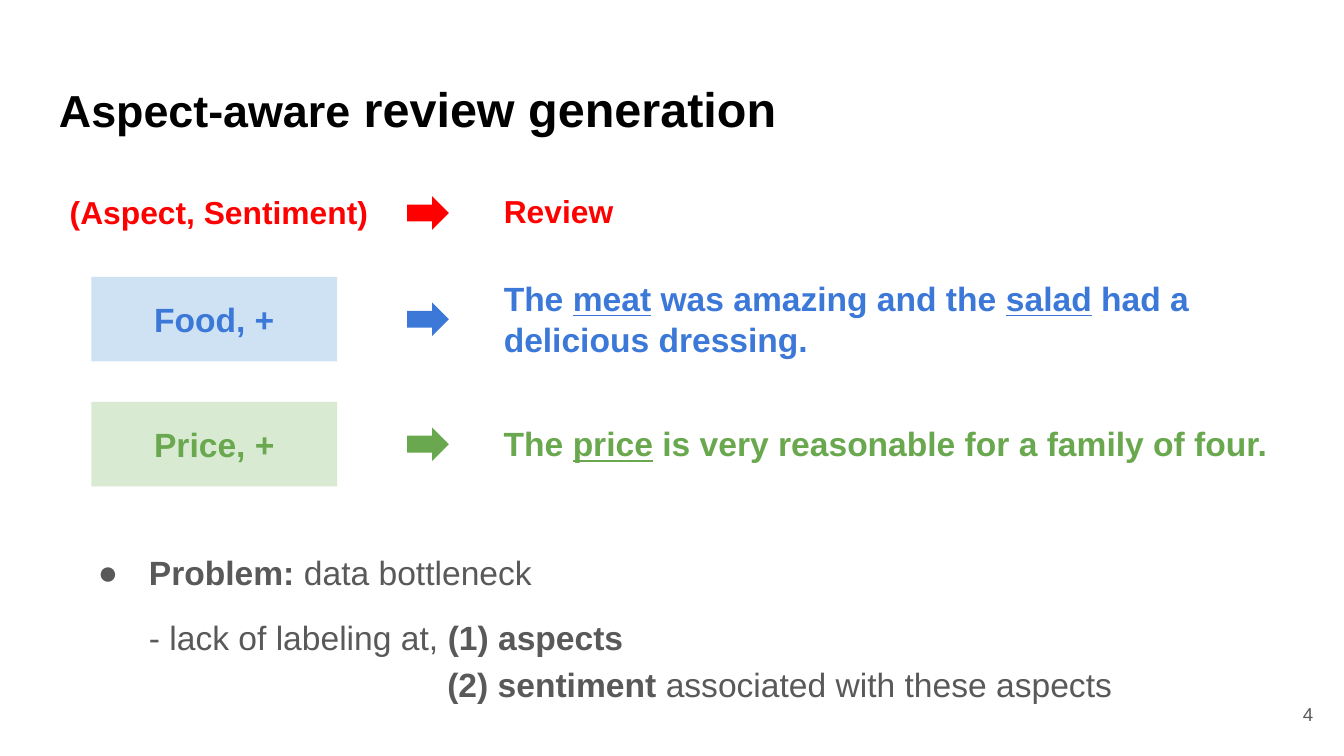
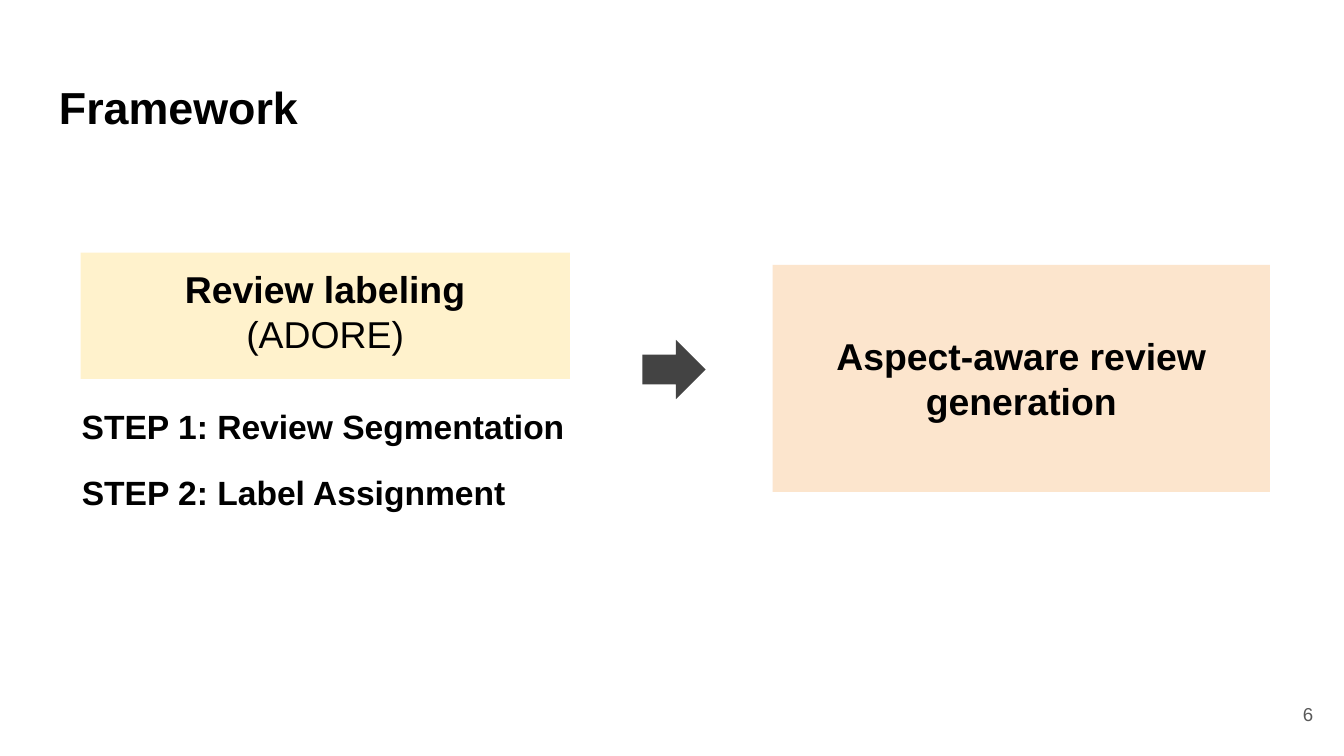
"""Build two slides on aspect-aware review generation and its framework."""
import pptx
import pptx.dml.color
import pptx.enum.shapes
import pptx.enum.text
import pptx.util
from lxml import etree
from pptx.oxml.ns import qn

Inches = pptx.util.Inches
RGBColor = pptx.dml.color.RGBColor
MSO_SHAPE = pptx.enum.shapes.MSO_SHAPE
PP_ALIGN = pptx.enum.text.PP_ALIGN
MSO_ANCHOR = pptx.enum.text.MSO_ANCHOR

FONT = "Arial"
COLORS = {
    "black": "000000", "gray": "595959", "dark": "434343", "red": "FF0000",
    "blue": "3C78D8", "pale_blue": "CFE2F3", "green": "6AA84F", "pale_green": "D9EAD3",
    "yellow": "FFF2CC", "peach": "FCE5CD",
}


def add_text(slide, box, paragraphs, size, color, fill=None, align=PP_ALIGN.LEFT, anchor=MSO_ANCHOR.TOP):
    """Write paragraphs of (text, style, optional size) runs; style holds b for bold, u for underline."""
    place = [Inches(length) for length in box]
    if fill:
        holder = slide.shapes.add_shape(MSO_SHAPE.RECTANGLE, *place)
        holder.shadow.inherit = False
        holder.fill.solid()
        holder.fill.fore_color.rgb = RGBColor.from_string(COLORS[fill])
        holder.line.fill.background()
    else:
        holder = slide.shapes.add_textbox(*place)
    frame = holder.text_frame
    frame.word_wrap = True
    frame.vertical_anchor = anchor
    frame.margin_left = frame.margin_right = frame.margin_top = frame.margin_bottom = Inches(0.1)
    for index, runs in enumerate(paragraphs):
        paragraph = frame.add_paragraph() if index else frame.paragraphs[0]
        paragraph.alignment = align
        for text, style, *own_size in runs:
            run = paragraph.add_run()
            run.text = text
            run.font.name = FONT
            run.font.size = pptx.util.Pt(own_size[0] if own_size else size)
            run.font.bold = "b" in style
            run.font.underline = "u" in style
            run.font.color.rgb = RGBColor.from_string(COLORS[color])
    return frame


def add_arrow(slide, box, color):
    """Draw a solid right arrow."""
    arrow = slide.shapes.add_shape(MSO_SHAPE.RIGHT_ARROW, *[Inches(length) for length in box])
    arrow.shadow.inherit = False
    arrow.fill.solid()
    arrow.fill.fore_color.rgb = RGBColor.from_string(COLORS[color])
    arrow.line.fill.background()


deck = pptx.Presentation()
deck.slide_width = Inches(10)
deck.slide_height = Inches(10 * 9 / 16)

pages = [
    ("4", [("Aspect-aware", "b"), (" review generation", "b", 26)]),
    ("6", [("Framework", "b")]),
]
slides = []
for number, title in pages:
    slide = deck.slides.add_slide(deck.slide_layouts[6])
    add_text(slide, (0.34, 0.49, 9.32, 0.63), [title], 24, "black")
    add_text(slide, (9.27, 5.1, 0.6, 0.43), [[(number, "")]], 10, "gray",
             align=PP_ALIGN.RIGHT, anchor=MSO_ANCHOR.MIDDLE)
    slides.append(slide)
generation, framework = slides

add_text(generation, (0.42, 1.31, 2.78, 0.54), [[("(Aspect, Sentiment)", "b")]], 17, "red",
         anchor=MSO_ANCHOR.MIDDLE)
add_arrow(generation, (3.03, 1.46, 0.31, 0.25), "red")
add_text(generation, (3.65, 1.33, 6.19, 0.49), [[("Review", "b")]], 17, "red")

examples = [
    ("Food, +", "blue", 2.06, (3.65, 1.97, 6.19, 0.81),
     [("The ", "b"), ("meat", "bu"), (" was amazing and the ", "b"), ("salad", "bu"),
      (" had a delicious dressing.", "b")]),
    ("Price, +", "green", 2.99, (3.65, 3.05, 6.13, 0.5),
     [("The ", "b"), ("price", "bu"), (" is very reasonable for a family of four.", "b")]),
]
for label, color, top, review_box, review in examples:
    add_text(generation, (0.68, top, 1.83, 0.63), [[(label, "b")]], 18, color,
             fill="pale_" + color, align=PP_ALIGN.CENTER, anchor=MSO_ANCHOR.MIDDLE)
    add_arrow(generation, (3.03, top + 0.19, 0.31, 0.25), color)
    add_text(generation, review_box, [review], 18, color)

problem = add_text(generation, (0.51, 4.01, 9.32, 1.36), [
    [("Problem: ", "b"), ("data bottleneck", "")],
    [("- lack of labeling at, ", ""), ("(1) aspects", "b")],
    [("(2) sentiment ", "b"), ("associated with these aspects", "")],
], 18, "gray")
for paragraph, margin, hanging in zip(problem.paragraphs, (0.5, 0.5, 2.72), (-0.38, 0, 0)):
    properties = paragraph._p.get_or_add_pPr()
    properties.set("marL", str(Inches(margin)))
    properties.set("indent", str(Inches(hanging)))
headline, first_lack, second_lack = problem.paragraphs
bullet_properties = headline._p.get_or_add_pPr()
bullet_color = etree.SubElement(bullet_properties, qn("a:buClr"))
etree.SubElement(bullet_color, qn("a:srgbClr"), val=COLORS["gray"])
etree.SubElement(bullet_properties, qn("a:buSzPts"), val="1800")
etree.SubElement(bullet_properties, qn("a:buFont"), typeface=FONT)
etree.SubElement(bullet_properties, qn("a:buChar"), char="●")
first_lack.line_spacing = second_lack.line_spacing = 1.15
first_lack.space_before = pptx.util.Pt(10)

add_text(framework, (0.6, 1.88, 3.64, 0.94), [[("Review labeling", "b")], [("(ADORE)", "")]],
         20, "black", fill="yellow", align=PP_ALIGN.CENTER)
add_arrow(framework, (4.78, 2.53, 0.47, 0.44), "dark")
add_text(framework, (5.75, 1.97, 3.7, 1.69), [[("Aspect-aware review generation", "b")]],
         20, "black", fill="peach", align=PP_ALIGN.CENTER, anchor=MSO_ANCHOR.MIDDLE)
steps = [("STEP 1: Review Segmentation", 4.04), ("STEP 2: Label Assignment", 3.45)]
for index, (step, width) in enumerate(steps):
    add_text(framework, (0.51, 2.92 + 0.49 * index, width, 0.5), [[(step, "b")]], 18, "black")

deck.save("out.pptx")
